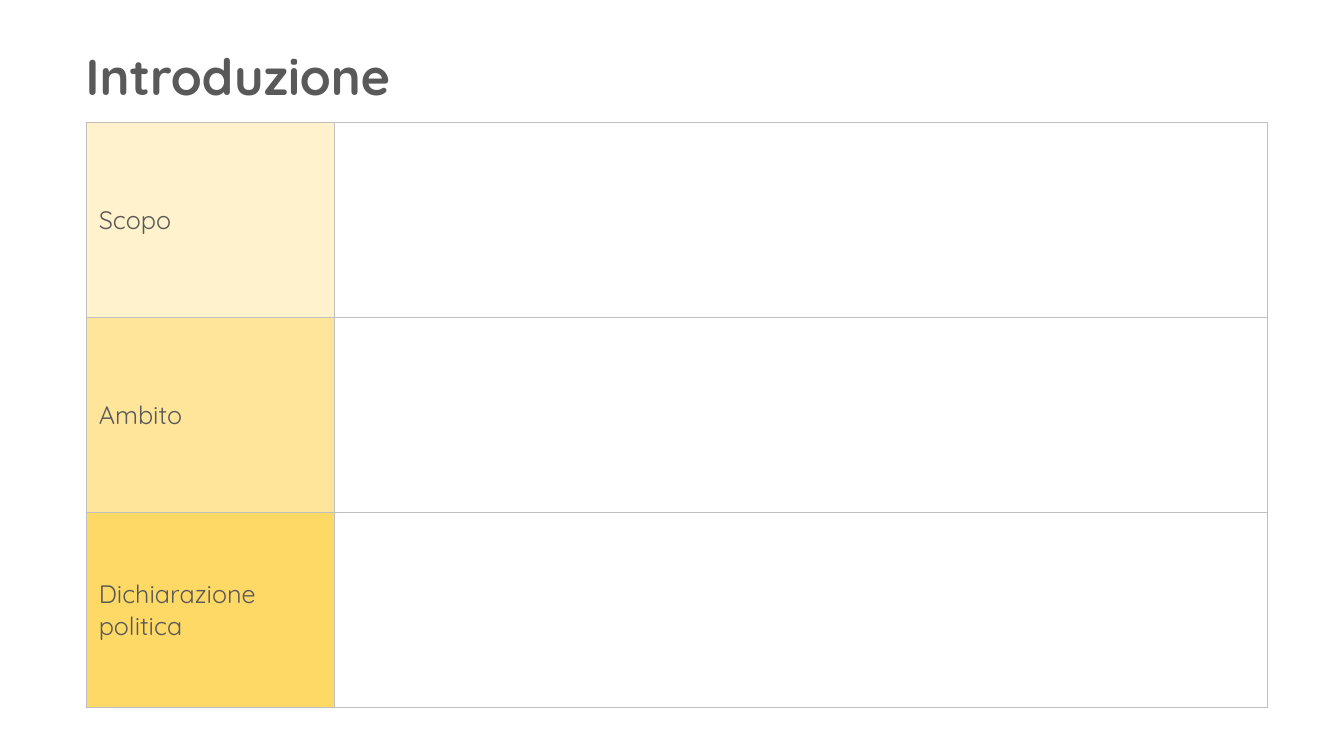
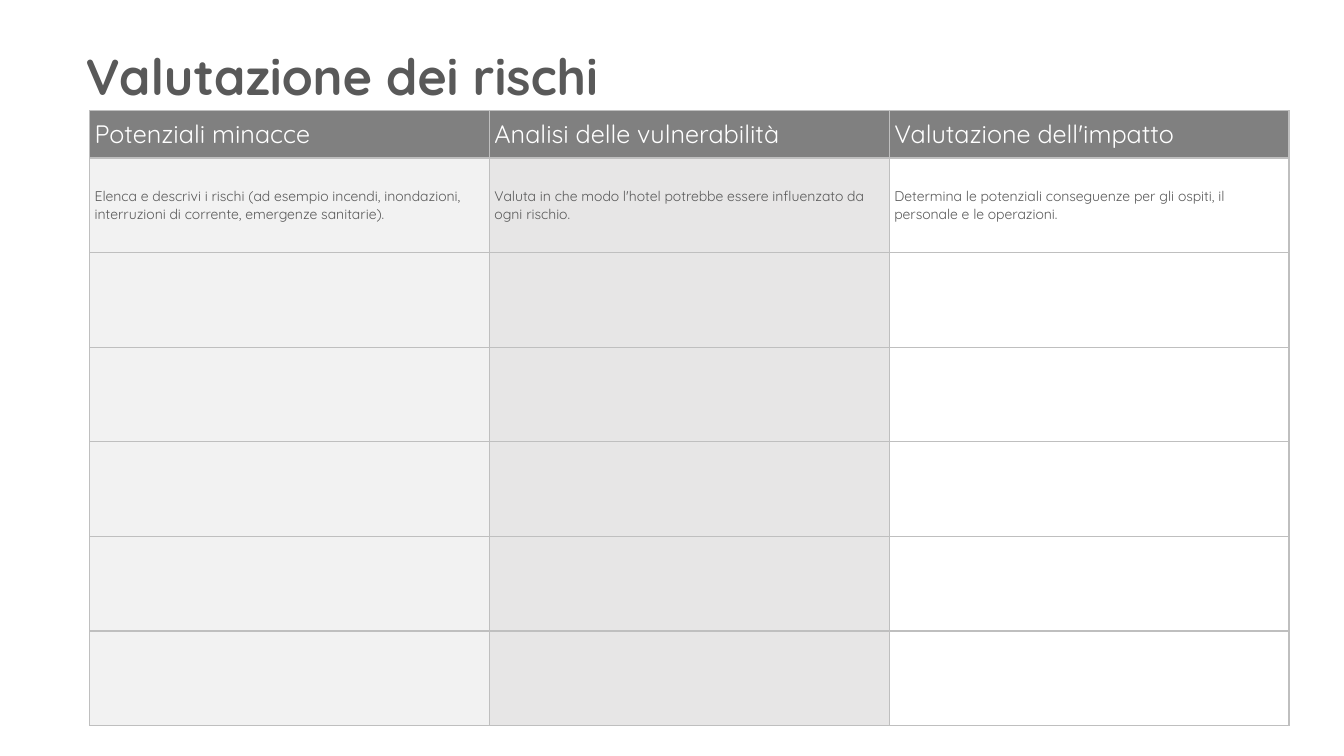
"""Build the introduction and risk assessment slides of an emergency plan."""
import pptx
import pptx.dml.color
import pptx.enum.text
import pptx.oxml
import pptx.oxml.ns
import pptx.util

Pt = pptx.util.Pt
ANCHOR = pptx.enum.text.MSO_ANCHOR
FONT = "Quicksand"
COLORS = {
    "text": "595959",
    "white": "FFFFFF",
    "border": "BFBFBF",
    "header": "808080",
    "grey_light": "F2F2F2",
    "grey": "E7E6E6",
    "yellow_light": "FFF2CC",
    "yellow": "FFE599",
    "yellow_dark": "FFD966",
}


def rgb(name):
    """Return the named colour."""
    return pptx.dml.color.RGBColor.from_string(COLORS[name])


def write(tf, text, size=18, color="text", bold=False):
    """Write one left-aligned run of formatted text into a text frame."""
    tf.word_wrap = True
    p = tf.paragraphs[0]
    p.alignment = pptx.enum.text.PP_ALIGN.LEFT
    r = p.add_run()
    r.text = text
    r.font.name = FONT
    r.font.size = Pt(size)
    r.font.bold = bold
    r.font.color.rgb = rgb(color)


def add_titled_slide(prs, title):
    """Add a slide with the shared title style."""
    s = prs.slides.add_slide(prs.slide_layouts[5])
    sp = s.shapes.title
    sp.left, sp.top, sp.width, sp.height = Pt(54), Pt(28), Pt(792), Pt(51)
    tf = sp.text_frame
    tf.auto_size = pptx.enum.text.MSO_AUTO_SIZE.NONE
    tf.vertical_anchor = ANCHOR.MIDDLE
    write(tf, title, size=36, bold=True)
    return s


def add_borders(cell):
    """Draw a thin line on all four sides of a cell."""
    tcPr = cell._tc.get_or_add_tcPr()
    for side in "LRTB":
        tcPr.append(pptx.oxml.parse_xml(
            f'<a:ln{side} {pptx.oxml.ns.nsdecls("a")} w="{Pt(1)}"><a:solidFill>'
            f'<a:srgbClr val="{COLORS["border"]}"/></a:solidFill></a:ln{side}>'))


def add_grid(s, left, top, widths, heights):
    """Add an unstyled table with the given column widths and row heights."""
    table = s.shapes.add_table(
        len(heights), len(widths), Pt(left), Pt(top),
        Pt(sum(widths)), Pt(sum(heights))).table
    table.first_row = table.horz_banding = False
    for column, width in zip(table.columns, widths):
        column.width = Pt(width)
    for row, height in zip(table.rows, heights):
        row.height = Pt(height)
    return table


def fill_cell(cell, fill, text="", indent=0, **fmt):
    """Style a cell and write its text, if any."""
    add_borders(cell)
    cell.fill.solid()
    cell.fill.fore_color.rgb = rgb(fill)
    cell.vertical_anchor = ANCHOR.MIDDLE
    cell.margin_left, cell.margin_right = Pt(3.6 + indent), Pt(3.6)
    cell.margin_top = cell.margin_bottom = 0
    if text:
        write(cell.text_frame, text, **fmt)


def add_introduction(prs):
    """Add the slide with one labelled row per topic."""
    s = add_titled_slide(prs, "Introduzione")
    topics = [
        ("Scopo", "yellow_light"),
        ("Ambito", "yellow"),
        ("Dichiarazione politica", "yellow_dark"),
    ]
    table = add_grid(s, 62, 87.8, [176.8, 666.4], [139.2] * len(topics))
    for i, (label, fill) in enumerate(topics):
        fill_cell(table.cell(i, 0), fill, label, indent=5)
        fill_cell(table.cell(i, 1), "white")


def add_risks(prs):
    """Add the slide with the risk assessment form."""
    s = add_titled_slide(prs, "Valutazione dei rischi")
    columns = [
        ("Potenziali minacce", "grey_light",
         "Elenca e descrivi i rischi (ad esempio incendi, inondazioni, "
         "interruzioni di corrente, emergenze sanitarie)."),
        ("Analisi delle vulnerabilità", "grey",
         "Valuta in che modo l'hotel potrebbe essere influenzato da "
         "ogni rischio."),
        ("Valutazione dell'impatto", "white",
         "Determina le potenziali conseguenze per gli ospiti, il "
         "personale e le operazioni."),
    ]
    heights = [33.6] + [67.6] * 6
    table = add_grid(s, 64, 79.2, [285.6] * len(columns), heights)
    for j, (heading, fill, hint) in enumerate(columns):
        fill_cell(table.cell(0, j), "header", heading, color="white")
        fill_cell(table.cell(1, j), fill, hint, size=10)
        for i in range(2, len(heights)):
            fill_cell(table.cell(i, j), fill)


def main():
    """Build and save the presentation."""
    prs = pptx.Presentation()
    prs.slide_width, prs.slide_height = Pt(960), Pt(540)
    add_introduction(prs)
    add_risks(prs)
    prs.save("out.pptx")


if __name__ == "__main__":
    main()
